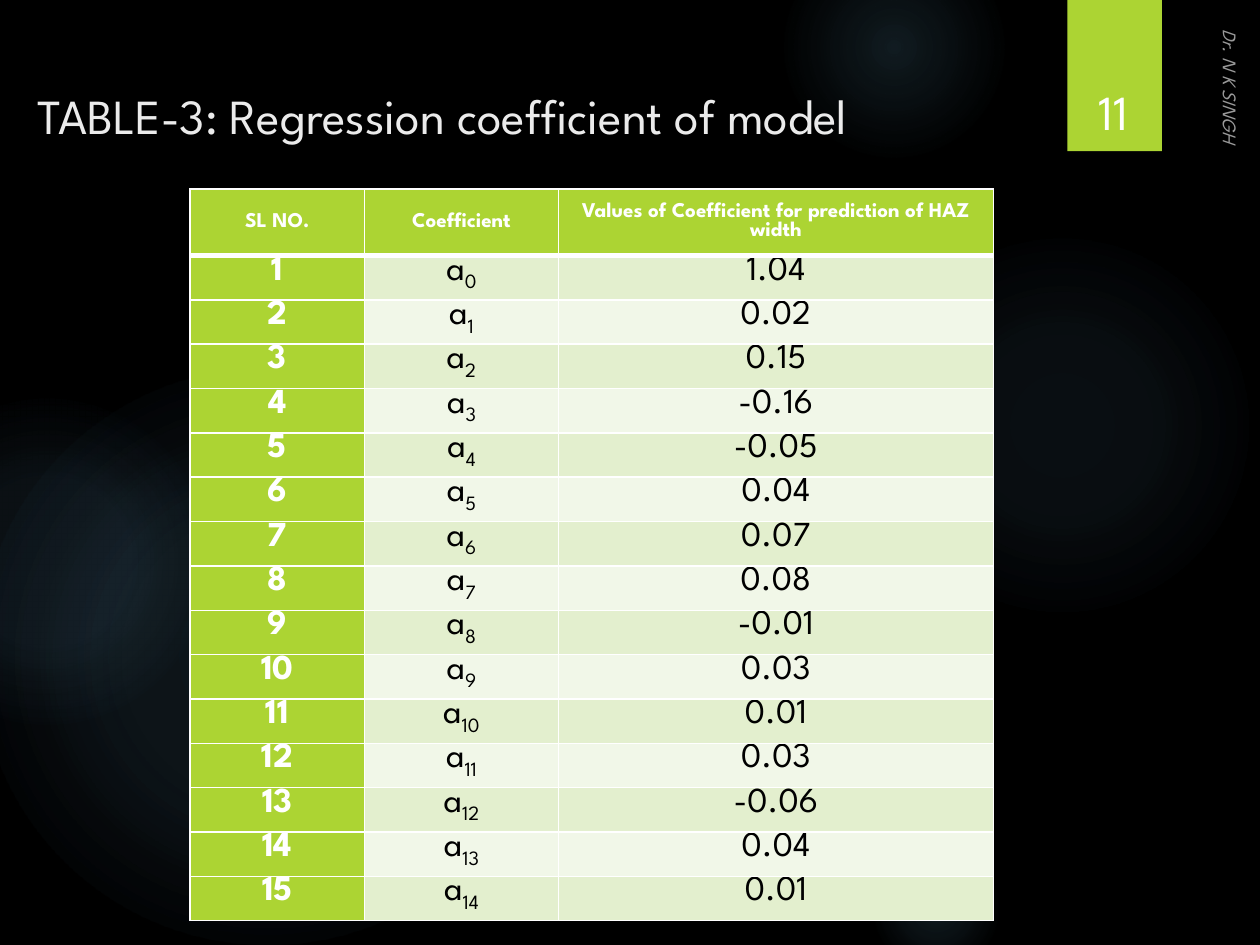
from dataclasses import dataclass

from pptx import Presentation
from pptx import oxml
from pptx import util as u
from pptx.dml.color import RGBColor
from pptx.enum import shapes, text
from pptx.oxml import ns

Pt = u.Pt


@dataclass(frozen=True)
class Theme:
    font: str = "League Spartan"
    background: str = "000000"
    accent: str = "ACD433"
    glow: str = "7AC4F0"
    title: str = "EBEBEB"
    light: str = "FFFFFF"
    dark: str = "000000"
    bands: tuple = ("E3EFCE", "F1F7E8")
    title_size: int = 28
    body_size: int = 20
    header_size: int = 12
    author_size: int = 11


THEME = Theme()

# left, top, diameter in points; (position %, opacity %) of each gradient stop
GLOWS = [
    (496, 132, 222, ((0, 7), (36, 6), (69, 0))),
    (448, -36, 126, ((0, 14), (36, 7), (73, 0))),
    (496, 480, 78, ((0, 14), (36, 7), (66, 0))),
    (-12, 210, 330, ((0, 11), (36, 10), (75, 0))),
    (-66, 228, 186, ((0, 8), (36, 8), (72, 0))),
]
HEADERS = ["SL NO.", "Coefficient", "Values of Coefficient for prediction of HAZ width"]
COEFFICIENTS = ["1.04", "0.02", "0.15", "-0.16", "-0.05", "0.04", "0.07", "0.08",
                "-0.01", "0.03", "0.01", "0.03", "-0.06", "0.04", "0.01"]
COLUMN_WIDTHS = [99.5, 111, 248.5]
HEADER_HEIGHT, ROW_HEIGHT = 38, 25.35


def set_attributes(target, values):
    for name, value in values.items():
        setattr(target, name, value)


def add_run(paragraph, wording, size, color, **font_format):
    run = paragraph.add_run()
    run.text = wording
    set_attributes(run.font, {"name": THEME.font, "size": Pt(size), **font_format})
    run.font.color.rgb = RGBColor.from_string(color)
    return run


def add_plain_shape(slide, kind, left, top, width, height):
    shape = slide.shapes.add_shape(kind, Pt(left), Pt(top), Pt(width), Pt(height))
    shape.shadow.inherit = False
    shape.line.fill.background()
    return shape


def add_glow(slide, left, top, diameter, stops):
    """Add a circle whose colour fades out from its centre."""
    shape = add_plain_shape(slide, shapes.MSO_SHAPE.OVAL, left, top, diameter, diameter)
    shape.fill.background()
    stop_xml = "".join(
        f'<a:gs pos="{position * 1000}"><a:srgbClr val="{THEME.glow}">'
        f'<a:alpha val="{opacity * 1000}"/></a:srgbClr></a:gs>'
        for position, opacity in stops)
    gradient = oxml.parse_xml(
        f'<a:gradFill {ns.nsdecls("a")} rotWithShape="1"><a:gsLst>{stop_xml}</a:gsLst>'
        '<a:path path="circle"><a:fillToRect l="50000" t="50000" r="50000" b="50000"/>'
        '</a:path></a:gradFill>')
    properties = shape._element.spPr
    properties.replace(properties.find(ns.qn("a:noFill")), gradient)


def add_page_tab(slide):
    tab = add_plain_shape(slide, shapes.MSO_SHAPE.RECTANGLE, 610, 0, 54, 86.4)
    tab.fill.solid()
    tab.fill.fore_color.rgb = RGBColor.from_string(THEME.accent)


def format_title(slide, wording):
    title = slide.shapes.title
    set_attributes(title, {"left": Pt(14.4), "top": Pt(36), "width": Pt(579.6), "height": Pt(110)})
    set_attributes(title.text_frame, {"vertical_anchor": text.MSO_ANCHOR.TOP, "word_wrap": True,
                                      "margin_top": Pt(13), "auto_size": text.MSO_AUTO_SIZE.NONE})
    paragraph = title.text_frame.paragraphs[0]
    paragraph.alignment = text.PP_ALIGN.LEFT
    add_run(paragraph, wording, THEME.title_size, THEME.title)
    slide.shapes._spTree.append(title._element)  # in front of the glows


def add_label(slide, box, wording, size, alignment, rotation=0, **font_format):
    label = slide.shapes.add_textbox(*map(Pt, box))
    label.rotation = rotation
    set_attributes(label.text_frame, {"word_wrap": True, "vertical_anchor": text.MSO_ANCHOR.BOTTOM})
    paragraph = label.text_frame.paragraphs[0]
    paragraph.alignment = alignment
    return add_run(paragraph, wording, size, THEME.light, **font_format)


def set_opacity(run, percent):
    color = run._r.rPr.find(f'.//{ns.qn("a:srgbClr")}')
    color.append(oxml.parse_xml(f'<a:alpha {ns.nsdecls("a")} val="{percent * 1000}"/>'))


def set_borders(cell, widths):
    """Draw light borders; widths maps the sides L, R, T, B to points."""
    properties = cell._tc.get_or_add_tcPr()
    for index, side in enumerate("LRTB"):
        properties.insert(index, oxml.parse_xml(
            f'<a:ln{side} {ns.nsdecls("a")} w="{Pt(widths[side])}"><a:solidFill>'
            f'<a:srgbClr val="{THEME.light}"/></a:solidFill></a:ln{side}>'))


def format_cell(cell, fill, anchor, widths):
    """Style the cell and return its centred paragraph."""
    set_attributes(cell, {"margin_left": Pt(5), "margin_right": Pt(5), "margin_top": 0,
                          "margin_bottom": 0, "vertical_anchor": anchor})
    cell.fill.solid()
    cell.fill.fore_color.rgb = RGBColor.from_string(fill)
    set_borders(cell, widths)
    paragraph = cell.text_frame.paragraphs[0]
    paragraph.alignment = text.PP_ALIGN.CENTER
    return paragraph


def add_coefficient_table(slide):
    height = HEADER_HEIGHT + ROW_HEIGHT * len(COEFFICIENTS)
    table = slide.shapes.add_table(len(COEFFICIENTS) + 1, len(HEADERS), Pt(108.7), Pt(108),
                                   Pt(sum(COLUMN_WIDTHS)), Pt(height)).table
    set_attributes(table, {"first_col": True})
    for column, width in zip(table.columns, COLUMN_WIDTHS):
        column.width = Pt(width)
    for index, row in enumerate(table.rows):
        row.height = Pt(ROW_HEIGHT if index else HEADER_HEIGHT)

    thin = dict.fromkeys("LRTB", 1)
    for column, heading in enumerate(HEADERS):
        paragraph = format_cell(table.cell(0, column), THEME.accent, text.MSO_ANCHOR.MIDDLE,
                                {**thin, "B": 3})
        add_run(paragraph, heading, THEME.header_size, THEME.light, bold=True)

    for index, value in enumerate(COEFFICIENTS):
        band = THEME.bands[index % 2]
        widths = thin if index else {**thin, "T": 3}
        number, symbol, estimate = (
            format_cell(table.cell(index + 1, column), fill, text.MSO_ANCHOR.TOP, widths)
            for column, fill in enumerate((THEME.accent, band, band)))
        add_run(number, str(index + 1), THEME.body_size, THEME.light, bold=True)
        add_run(symbol, "a", THEME.body_size, THEME.dark, bold=False)
        subscript = add_run(symbol, str(index), THEME.body_size, THEME.dark, bold=False)
        subscript._r.rPr.set("baseline", "-25000")
        add_run(estimate, value, THEME.body_size, THEME.dark, bold=False)


def main():
    presentation = Presentation()
    set_attributes(presentation, {"slide_width": Pt(720), "slide_height": Pt(540)})
    slide = presentation.slides.add_slide(presentation.slide_layouts[5])
    slide.background.fill.solid()
    slide.background.fill.fore_color.rgb = RGBColor.from_string(THEME.background)

    for glow in GLOWS:
        add_glow(slide, *glow)
    add_page_tab(slide)
    format_title(slide, "TABLE-3: Regression coefficient of model")
    add_coefficient_table(slide)
    author = add_label(slide, (550, 152.6, 304, 18), "Dr. N K SINGH", THEME.author_size,
                       text.PP_ALIGN.LEFT, rotation=90, italic=True)
    set_opacity(author, 60)
    add_label(slide, (611.3, 23, 49.7, 60.5), "11", THEME.title_size, text.PP_ALIGN.CENTER)
    presentation.save("out.pptx")


if __name__ == "__main__":
    main()
